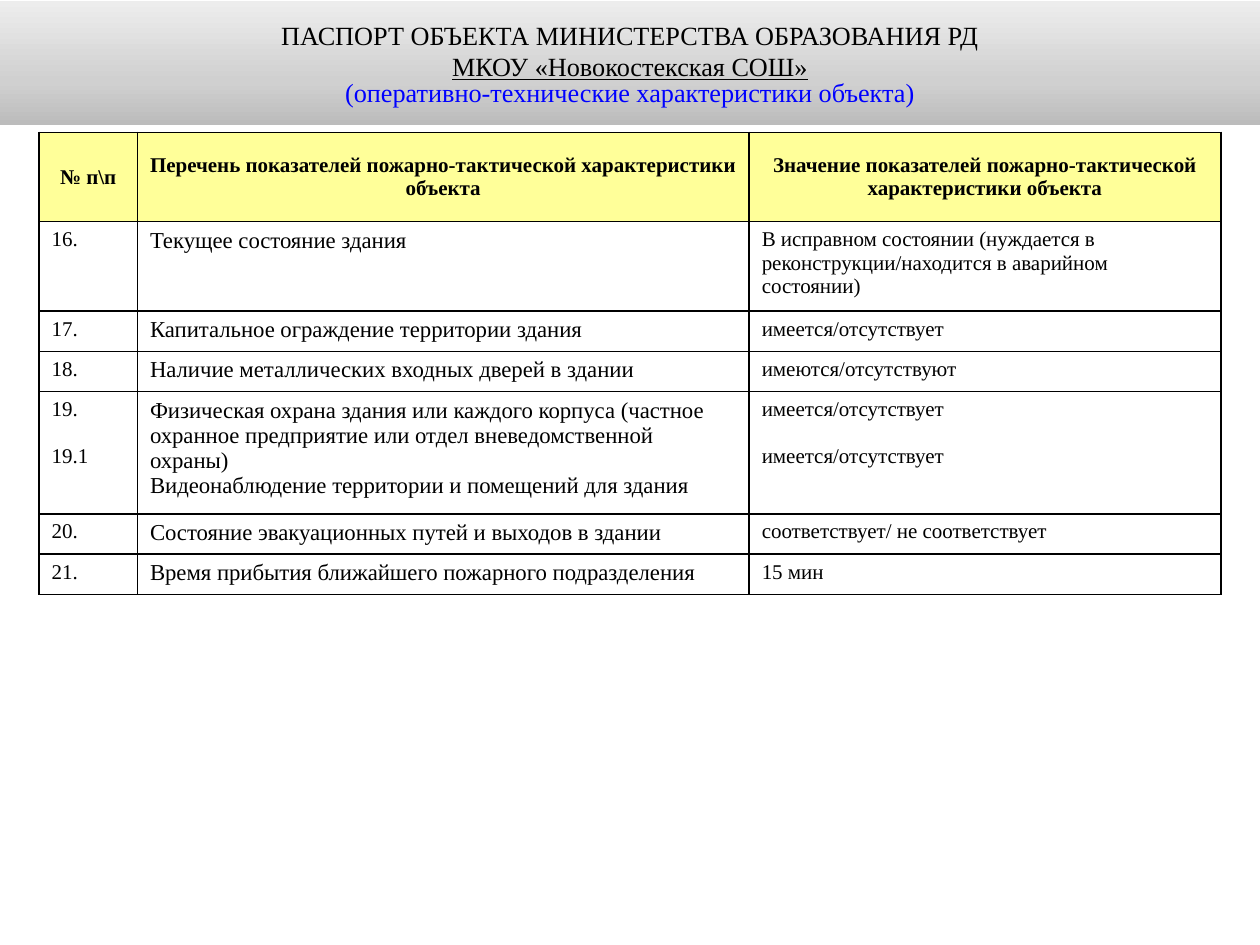
from copy import deepcopy
from dataclasses import dataclass

from pptx import Presentation
from pptx.dml.color import RGBColor
from pptx.enum import shapes, text
from pptx.oxml import ns, parse_xml
from pptx.util import Inches, Pt


@dataclass(frozen=True)
class Theme:
    font: str = "Times New Roman"
    title_size: float = 15
    body_size: float = 12
    indicator_size: float = 13
    ink: str = "000000"
    accent: str = "0000FF"
    header_fill: str = "FFFF99"
    cell_fill: str = "FFFFFF"
    banner_stops: tuple = ((0, "BCBCBC"), (0.35, "D0D0D0"), (1, "EDEDED"))
    border_width: float = 1


THEME = Theme()

TITLE = "ПАСПОРТ ОБЪЕКТА МИНИСТЕРСТВА ОБРАЗОВАНИЯ РД"
SCHOOL = "МКОУ «Новокостекская СОШ»"
SUBTITLE = "(оперативно-технические характеристики объекта)"

COLUMN_WIDTHS = (0.78, 4.85, 3.74)
ROW_HEIGHTS = (0.71, 0.71, 0.32, 0.32, 0.97, 0.32, 0.32)
ROWS = (
    ("№ п\\п",
     "Перечень показателей пожарно-тактической характеристики объекта",
     "Значение показателей пожарно-тактической характеристики объекта"),
    ("16.", "Текущее состояние здания",
     "В исправном состоянии (нуждается в реконструкции/находится в аварийном состоянии)"),
    ("17.", "Капитальное ограждение территории здания", "имеется/отсутствует"),
    ("18.", "Наличие металлических входных дверей в здании", "имеются/отсутствуют"),
    ("19.\n19.1",
     "Физическая охрана здания или каждого корпуса (частное охранное предприятие "
     "или отдел вневедомственной охраны)\n"
     "Видеонаблюдение территории и помещений для здания",
     "имеется/отсутствует\nимеется/отсутствует"),
    ("20.", "Состояние эвакуационных путей и выходов в здании",
     "соответствует/ не соответствует"),
    ("21.", "Время прибытия ближайшего пожарного подразделения", "15 мин"),
)
INDICATOR_COLUMN = 1


def set_font(paragraph, size, color=THEME.ink, bold=False, underline=False):
    font = paragraph.font
    font.name = THEME.font
    font.size = Pt(size)
    font.color.rgb = RGBColor.from_string(color)
    font.bold = bold
    font.underline = underline


def fill_gradient(shape, stops):
    """Fill the shape with three stops running from bottom to top."""
    shape.fill.gradient()
    shape.fill.gradient_angle = 90
    stop_list = shape._element.spPr.find(".//" + ns.qn("a:gsLst"))
    stop_list.insert(1, deepcopy(stop_list[0]))
    for stop, (position, color) in zip(shape.fill.gradient_stops, stops):
        stop.position = position
        stop.color.rgb = RGBColor.from_string(color)


def add_banner(slide, left, top, width, height):
    banner = slide.shapes.add_shape(
        shapes.MSO_SHAPE.RECTANGLE, left, top, width, height)
    banner.shadow.inherit = False
    banner.line.fill.background()
    fill_gradient(banner, THEME.banner_stops)

    frame = banner.text_frame
    frame.word_wrap = True
    frame.vertical_anchor = text.MSO_ANCHOR.MIDDLE
    frame.text = "\n".join((TITLE, SCHOOL, SUBTITLE))
    title, school, subtitle = frame.paragraphs
    for paragraph in frame.paragraphs:
        paragraph.alignment = text.PP_ALIGN.CENTER
    set_font(title, THEME.title_size)
    set_font(school, THEME.title_size, underline=True)
    set_font(subtitle, THEME.title_size, THEME.accent)
    subtitle.line_spacing = 0.8


def set_borders(cell):
    properties = cell._tc.get_or_add_tcPr()
    for index, side in enumerate(("lnL", "lnR", "lnT", "lnB")):
        properties.insert(index, parse_xml(
            f'<a:{side} {ns.nsdecls("a")} w="{Pt(THEME.border_width)}"><a:solidFill>'
            f'<a:srgbClr val="{THEME.ink}"/></a:solidFill></a:{side}>'))


def fill_cell(cell, content, is_header, is_indicator):
    cell.fill.solid()
    cell.fill.fore_color.rgb = RGBColor.from_string(
        THEME.header_fill if is_header else THEME.cell_fill)
    set_borders(cell)
    cell.vertical_anchor = text.MSO_ANCHOR.MIDDLE if is_header else text.MSO_ANCHOR.TOP
    cell.text = content
    large = is_indicator and not is_header
    for index, paragraph in enumerate(cell.text_frame.paragraphs):
        paragraph.alignment = text.PP_ALIGN.CENTER if is_header else text.PP_ALIGN.LEFT
        if index and not is_indicator:
            paragraph.space_before = Pt(13.5)
        set_font(paragraph, THEME.indicator_size if large else THEME.body_size,
                 bold=is_header)


def add_indicator_table(slide, left, top, width, height):
    table = slide.shapes.add_table(
        len(ROWS), len(COLUMN_WIDTHS), left, top, width, height).table
    table.first_row = table.horz_banding = False
    for column, share in zip(table.columns, COLUMN_WIDTHS):
        column.width = int(width * share / sum(COLUMN_WIDTHS))
    for row, share in zip(table.rows, ROW_HEIGHTS):
        row.height = int(height * share / sum(ROW_HEIGHTS))
    for row_index, contents in enumerate(ROWS):
        for column_index, content in enumerate(contents):
            fill_cell(table.cell(row_index, column_index), content,
                      row_index == 0, column_index == INDICATOR_COLUMN)


def main():
    presentation = Presentation()
    presentation.slide_width = Inches(10)
    presentation.slide_height = Inches(7.5)
    slide = presentation.slides.add_slide(presentation.slide_layouts[6])
    add_indicator_table(slide, Inches(0.31), Inches(1.05), Inches(9.38), Inches(3.67))
    add_banner(slide, Inches(0), Inches(0.01), Inches(10), Inches(0.98))
    presentation.save("out.pptx")


if __name__ == "__main__":
    main()
